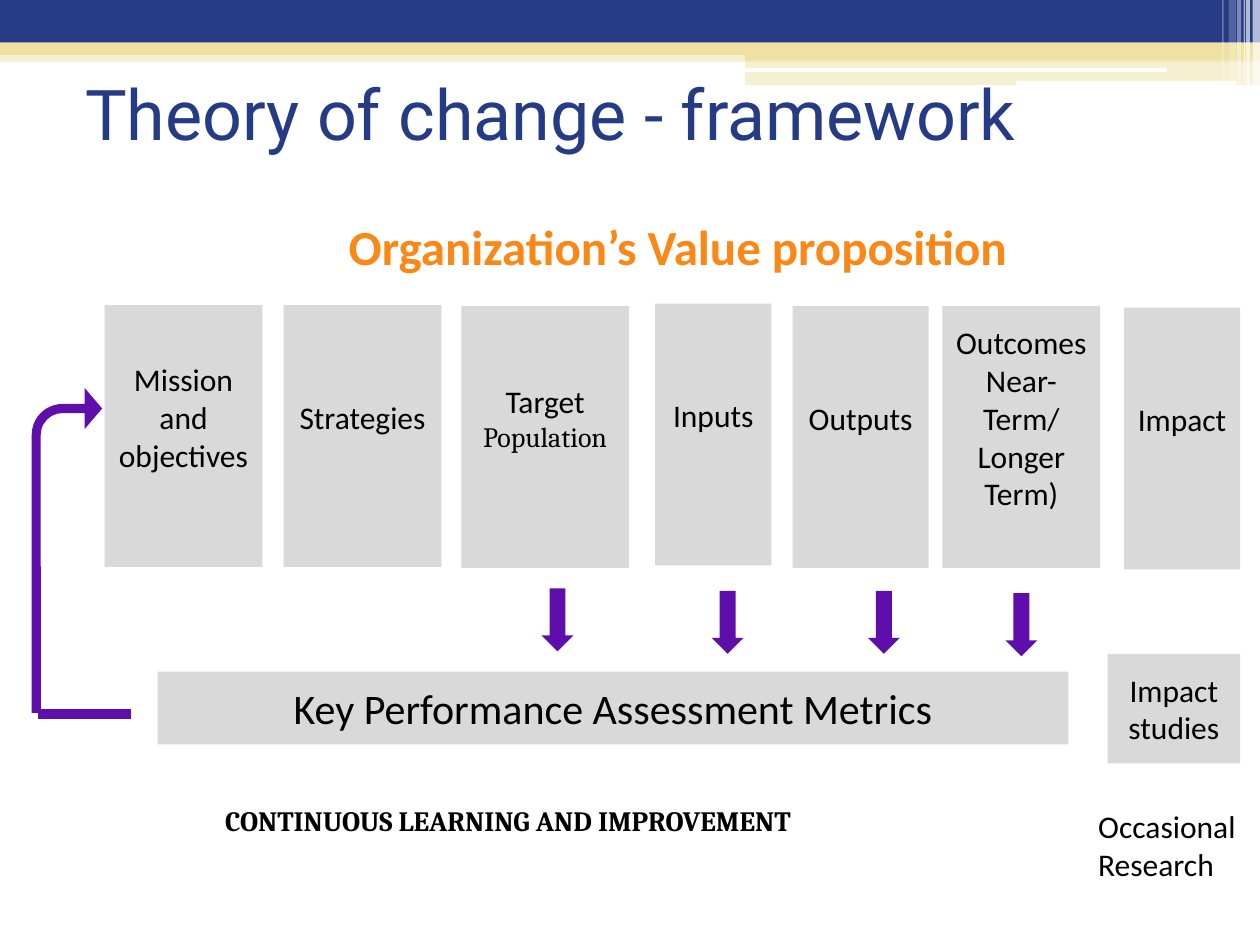
"""Build the theory of change framework slide."""
from dataclasses import dataclass

from lxml import etree
from pptx import Presentation
from pptx import util as u
from pptx.dml.color import RGBColor
from pptx.enum import shapes, text
from pptx.oxml import ns


@dataclass(frozen=True)
class Theme:
    navy: str = "263B86"
    sand: str = "EFE1A2"
    white: str = "FFFFFF"
    grey: str = "D9D9D9"
    purple: str = "5E0EAA"
    orange: str = "FA8716"
    black: str = "000000"
    sans: str = "Calibri"
    serif: str = "Cambria"
    display: str = "Roboto"
    title: int = 40
    heading: int = 28
    metrics: int = 24
    body: int = 18
    note: int = 16


THEME = Theme()
KIND = shapes.MSO_SHAPE
CENTER = text.PP_ALIGN.CENTER
MIDDLE = text.MSO_ANCHOR.MIDDLE

BANDS = [
    ((0, 1.02, 25.4, 0.23), THEME.sand, 50),
    ((0, 0, 25.4, 0.86), THEME.navy, 100),
    ((0, 0.86, 25.4, 0.25), THEME.sand, 100),
    ((15.02, 0.99, 10.38, 0.23), THEME.sand, 100),
    ((15.02, 1.22, 10.38, 0.5), THEME.sand, 50),
]
HIGHLIGHTS = [(15.02, 1.37, 8.5, 0.08), (20.48, 1.63, 4.44, 0.1)]
STRIPES = [
    (25.25, 0.15, 1.73, 65), (25.12, 0.08, 1.73, 65), (25.07, 0.03, 1.73, 60),
    (24.94, 0.08, 1.73, 40), (24.77, 0.15, 1.63, 20), (24.64, 0.03, 1.63, 30),
]
CARD_HEIGHT = 5.28
CARDS = [
    (2.11, 6.15, 3.18, ["Mission and objectives"]),
    (5.72, 6.15, 3.18, ["Strategies"]),
    (9.3, 6.17, 3.38, [[("Target ", {}),
                        ("Population", {"font": THEME.serif, "size": THEME.note})]]),
    (13.21, 6.12, 2.34, ["Inputs"]),
    (15.98, 6.17, 2.74, ["Outputs"]),
    (19, 6.17, 3.18, ["Outcomes", "Near-Term/ Longer Term)"]),
    (22.66, 6.2, 2.34, ["Impact"]),
]
RESULTS = [
    ((3.18, 13.54, 18.36, 1.47), ["Key Performance Assessment Metrics"], THEME.metrics),
    ((22.33, 13.18, 2.67, 2.21), ["Impact studies"], THEME.body),
]
LABELS = [
    ((1.47, 0.79, 22.86, 2.97), ["Theory of change - framework"],
     {"font": THEME.display, "size": THEME.title, "color": THEME.navy, "anchor": MIDDLE}),
    ((6.78, 4.24, 14.17, 1.45), ["Organization’s Value proposition"],
     {"size": THEME.heading, "color": THEME.orange, "bold": True, "wrap": False}),
    ((4.29, 16.08, 14.83, 0.94), ["CONTINUOUS LEARNING AND IMPROVEMENT"],
     {"font": THEME.serif, "size": THEME.note, "bold": True, "wrap": False}),
    ((21.89, 16.15, 3.51, 1.8), ["Occasional", "Research"], {}),
]
DOWN_ARROWS = [(10.92, 11.86), (14.35, 11.91), (17.5, 11.91), (20.27, 11.96)]
FEEDBACK = [
    (KIND.BENT_ARROW, (0.64, 7.82, 1.42, 6.55), (0.129, 0.293, 0.25, 0.438)),
    (KIND.MATH_MINUS, (0.43, 13.97, 2.54, 0.84), ()),
]


def place(area):
    """Turn centimetre values into lengths."""
    return [u.Cm(value) for value in area]


def add_block(page, kind, area, color, opacity=100, adjustments=()):
    """Add a filled shape without line or shadow."""
    box = page.shapes.add_shape(kind, *place(area))
    box.shadow.inherit = False
    box.line.fill.background()
    box.fill.solid()
    box.fill.fore_color.rgb = RGBColor.from_string(color)
    for index, value in enumerate(adjustments):
        box.adjustments[index] = value
    if opacity < 100:
        tint = box.element.spPr.find(ns.qn("a:solidFill"))[0]
        etree.SubElement(tint, ns.qn("a:alpha"), val=str(opacity * 1000))
    return box


def write(box, lines, font=THEME.sans, size=THEME.body, color=THEME.black, bold=False,
          align=text.PP_ALIGN.LEFT, anchor=text.MSO_ANCHOR.TOP, wrap=True, bottom=0.13):
    """Fill a box with paragraphs of plain or mixed spans."""
    frame = box.text_frame
    frame.word_wrap = wrap
    frame.vertical_anchor = anchor
    frame.margin_bottom = u.Cm(bottom)
    for index, line in enumerate(lines):
        para = frame.add_paragraph() if index else frame.paragraphs[0]
        para.alignment = align
        for words, change in [(line, {})] if isinstance(line, str) else line:
            span = para.add_run()
            span.text = words
            span.font.name = change.get("font", font)
            span.font.size = u.Pt(change.get("size", size))
            span.font.bold = bold
            span.font.color.rgb = RGBColor.from_string(color)


def main():
    """Assemble and save the deck."""
    deck = Presentation()
    deck.slide_width, deck.slide_height = place((25.4, 19.05))
    page = deck.slides.add_slide(deck.slide_layouts[6])

    for area, color, opacity in BANDS:
        add_block(page, KIND.RECTANGLE, area, color, opacity)
    for area in HIGHLIGHTS:
        add_block(page, KIND.ROUNDED_RECTANGLE, area, THEME.white)
    for left, width, height, opacity in STRIPES:
        add_block(page, KIND.RECTANGLE, (left, 0, width, height), THEME.white, opacity)

    for left, top, width, lines in CARDS:
        card = add_block(page, KIND.RECTANGLE, (left, top, width, CARD_HEIGHT), THEME.grey)
        write(card, lines, align=CENTER, anchor=MIDDLE, bottom=0.9)
    for area, lines, size in RESULTS:
        result = add_block(page, KIND.RECTANGLE, area, THEME.grey)
        write(result, lines, size=size, align=CENTER, anchor=MIDDLE)
    for area, lines, style in LABELS:
        write(page.shapes.add_textbox(*place(area)), lines, **style)

    for kind, area, adjustments in FEEDBACK:
        add_block(page, kind, area, THEME.purple, adjustments=adjustments)
    for left, top in DOWN_ARROWS:
        add_block(page, KIND.DOWN_ARROW, (left, top, 0.64, 1.27), THEME.purple)

    deck.save("out.pptx")


if __name__ == "__main__":
    main()
